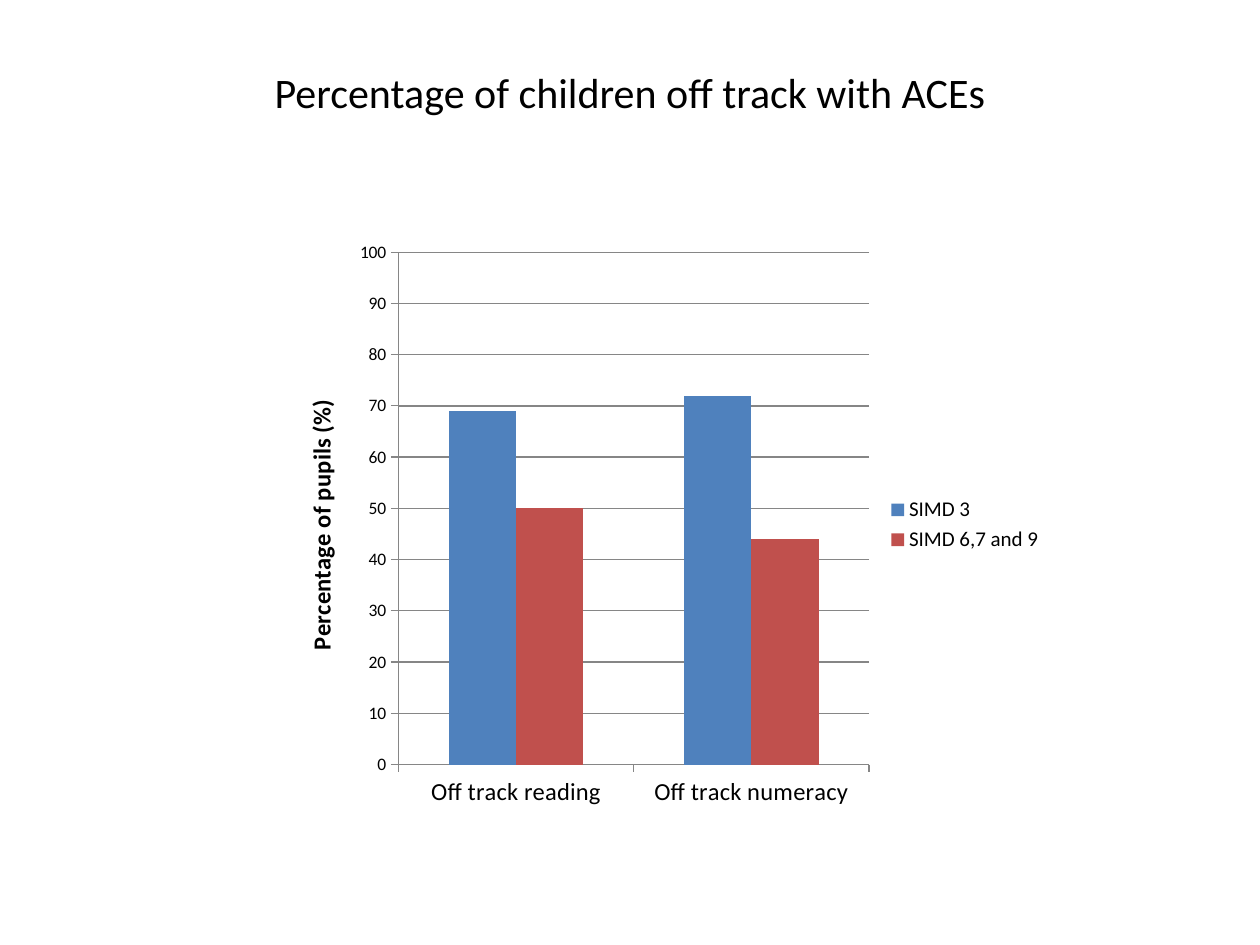
from pptx import Presentation
from pptx.chart.data import CategoryChartData
from pptx.dml.color import RGBColor
from pptx.enum.chart import XL_CHART_TYPE, XL_LEGEND_POSITION, XL_TICK_MARK
from pptx.enum.text import MSO_ANCHOR, PP_ALIGN
from pptx.util import Inches, Pt

FONT = "Calibri"
BLACK = "000000"
GRID = "868686"
CATEGORIES = ["Off track reading", "Off track numeracy"]
SERIES = [
    ("SIMD 3", [69, 72], "4F81BD"),
    ("SIMD 6,7 and 9", [50, 44], "C0504D"),
]


def color(value):
    return RGBColor.from_string(value)


def set_attrs(obj, values):
    for name, value in values.items():
        setattr(obj, name, value)


def set_font(font, size, bold=False):
    set_attrs(font, {"name": FONT, "size": Pt(size), "bold": bold})
    font.color.rgb = color(BLACK)


def set_line(line):
    line.color.rgb = color(GRID)
    line.width = Pt(0.75)


def add_title(s, text):
    sp = s.shapes.title
    set_attrs(sp, {"left": Inches(0.5), "top": Inches(0.3),
                   "width": Inches(9), "height": Inches(1.25)})
    tf = sp.text_frame
    # The deep bottom margin lifts the line above the middle of the box.
    set_attrs(tf, {"word_wrap": True, "vertical_anchor": MSO_ANCHOR.MIDDLE,
                   "margin_bottom": Inches(0.45)})
    p = tf.paragraphs[0]
    p.alignment = PP_ALIGN.CENTER
    r = p.add_run()
    r.text = text
    set_font(r.font, 24)


def format_axis(axis, size):
    set_attrs(axis, {"major_tick_mark": XL_TICK_MARK.OUTSIDE,
                     "minor_tick_mark": XL_TICK_MARK.NONE})
    set_font(axis.tick_labels.font, size)
    set_line(axis.format.line)


def format_value_axis(axis, title):
    format_axis(axis, 10)
    set_attrs(axis, {"minimum_scale": 0, "maximum_scale": 100,
                     "major_unit": 10, "has_major_gridlines": True})
    set_line(axis.major_gridlines.format.line)
    p = axis.axis_title.text_frame.paragraphs[0]
    r = p.add_run()
    r.text = title
    set_font(r.font, 14, bold=True)


def add_column_chart(s):
    data = CategoryChartData()
    data.categories = CATEGORIES
    for name, values, _ in SERIES:
        data.add_series(name, values)
    chart = s.shapes.add_chart(
        XL_CHART_TYPE.COLUMN_CLUSTERED, Inches(2.2), Inches(1.83),
        Inches(6.18), Inches(4.67), data).chart
    set_attrs(chart, {"has_title": False, "has_legend": True})
    set_font(chart.font, 10)
    set_attrs(chart.legend, {"position": XL_LEGEND_POSITION.RIGHT,
                             "include_in_layout": False})
    set_font(chart.legend.font, 12)
    format_axis(chart.category_axis, 14)
    format_value_axis(chart.value_axis, "Percentage of pupils (%)")

    plot = chart.plots[0]
    set_attrs(plot, {"gap_width": 150, "overlap": 0,
                     "vary_by_categories": False})
    for series, (_, _, fill) in zip(plot.series, SERIES):
        series.format.fill.solid()
        series.format.fill.fore_color.rgb = color(fill)


def main():
    prs = Presentation()
    set_attrs(prs, {"slide_width": Inches(10), "slide_height": Inches(7.5)})
    s = prs.slides.add_slide(prs.slide_layouts[5])
    add_title(s, "Percentage of children off track with ACEs")
    add_column_chart(s)
    prs.save("out.pptx")


if __name__ == "__main__":
    main()
